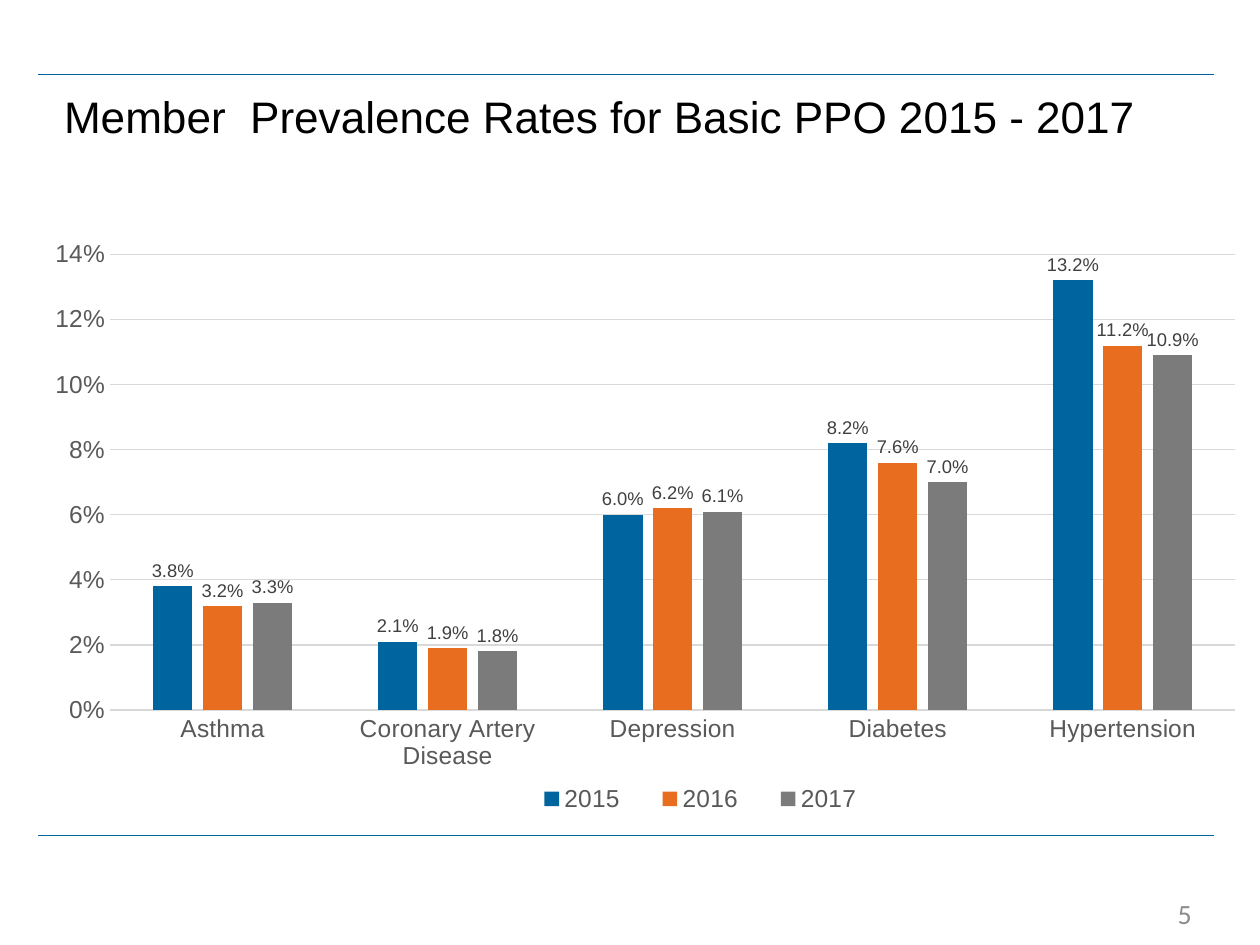
from dataclasses import dataclass

from lxml import etree
from pptx import Presentation
from pptx.chart.data import CategoryChartData
from pptx.dml.color import RGBColor
from pptx.enum.chart import XL_CHART_TYPE, XL_LABEL_POSITION, XL_LEGEND_POSITION, XL_TICK_MARK
from pptx.enum.shapes import MSO_CONNECTOR
from pptx.enum.text import MSO_ANCHOR, PP_ALIGN
from pptx.oxml.ns import qn
from pptx.util import Pt

COLUMNS = XL_CHART_TYPE.COLUMN_CLUSTERED
OUTSIDE = XL_LABEL_POSITION.OUTSIDE_END
BOTTOM = XL_LEGEND_POSITION.BOTTOM
NO_TICK = XL_TICK_MARK.NONE
STRAIGHT = MSO_CONNECTOR.STRAIGHT
TOP = MSO_ANCHOR.TOP
LEFT, RIGHT = PP_ALIGN.LEFT, PP_ALIGN.RIGHT

BLUE, ORANGE, GRAY = "00659E", "E86D1F", "7B7B7B"
GRID, AXIS_TEXT, LABEL_TEXT = "D9D9D9", "595959", "404040"


@dataclass
class Label:
    text: str
    x: float
    y: float
    w: float
    h: float
    size: float
    font: str
    color: str
    align: PP_ALIGN
    spacing: float


@dataclass
class YearRates:
    year: str
    rates: tuple[float, ...]
    color: str


CONDITIONS = ("Asthma", "Coronary Artery Disease", "Depression", "Diabetes", "Hypertension")
YEARS = (
    YearRates("2015", (0.038, 0.021, 0.060, 0.082, 0.132), BLUE),
    YearRates("2016", (0.032, 0.019, 0.062, 0.076, 0.112), ORANGE),
    YearRates("2017", (0.033, 0.018, 0.061, 0.070, 0.109), GRAY),
)
LABELS = (
    Label("Member  Prevalence Rates for Basic PPO 2015 - 2017",
          29.5, 50.8, 666, 62, 25.2, "Arial", "000000", LEFT, 0.9),
    Label("5", 542, 509, 146, 19.5, 15.9, "Calibri", "8C8C8C", RIGHT, 1.0),
)
RULE_LEFT, RULE_RIGHT = 21.6, 694
RULE_TOPS = (42.5, 477.4)


def rgb(color: str) -> RGBColor:
    return RGBColor.from_string(color)


def set_font(font, size: float, color: str, name: str = "Arial") -> None:
    font.size = Pt(size)
    font.name = name
    font.color.rgb = rgb(color)


def set_line(line, color: str, width: float) -> None:
    line.color.rgb = rgb(color)
    line.width = Pt(width)


def add_rule(s, y: float) -> None:
    rule = s.shapes.add_connector(STRAIGHT, Pt(RULE_LEFT), Pt(y), Pt(RULE_RIGHT), Pt(y))
    set_line(rule.line, BLUE, 0.5)
    etree.SubElement(rule._element.spPr, qn("a:effectLst"))


def add_label(s, label: Label) -> None:
    sp = s.shapes.add_textbox(Pt(label.x), Pt(label.y), Pt(label.w), Pt(label.h))
    tf = sp.text_frame
    tf.word_wrap = True
    tf.vertical_anchor = TOP
    p = tf.paragraphs[0]
    p.alignment = label.align
    p.line_spacing = label.spacing
    r = p.add_run()
    r.text = label.text
    set_font(r.font, label.size, label.color, label.font)


def set_layout(parent, index: int, **values: str | float) -> None:
    for old in parent.findall(qn("c:layout")):
        parent.remove(old)
    layout = etree.Element(qn("c:layout"))
    manual = etree.SubElement(layout, qn("c:manualLayout"))
    for tag, value in values.items():
        etree.SubElement(manual, qn(f"c:{tag}")).set("val", str(value))
    parent.insert(index, layout)


def add_rates_chart(s) -> None:
    data = CategoryChartData(number_format="0.0%")
    data.categories = CONDITIONS
    for entry in YEARS:
        data.add_series(entry.year, entry.rates)
    chart = s.shapes.add_chart(COLUMNS, Pt(17.3), Pt(131), Pt(702.7), Pt(342.7), data).chart
    chart.has_title = False
    set_font(chart.font, 10, "000000")

    plot = chart.plots[0]
    plot.gap_width = 219
    plot.overlap = -27
    plot.vary_by_categories = False
    for series, entry in zip(plot.series, YEARS):
        series.format.fill.solid()
        series.format.fill.fore_color.rgb = rgb(entry.color)
        series.invert_if_negative = False
    plot.has_data_labels = True
    labels = plot.data_labels
    labels.show_value = True
    labels.position = OUTSIDE
    labels.number_format = "0.0%"
    labels.number_format_is_linked = False
    set_font(labels.font, 10.5, LABEL_TEXT)

    for axis in (chart.category_axis, chart.value_axis):
        axis.major_tick_mark = axis.minor_tick_mark = NO_TICK
        set_font(axis.tick_labels.font, 14, AXIS_TEXT)
    set_line(chart.category_axis.format.line, GRID, 0.75)
    rates = chart.value_axis
    rates.minimum_scale, rates.maximum_scale, rates.major_unit = 0, 0.14, 0.02
    rates.tick_labels.number_format = "0%"
    rates.tick_labels.number_format_is_linked = False
    rates.format.line.fill.background()
    set_line(rates.major_gridlines.format.line, GRID, 0.75)

    chart.has_legend = True
    legend = chart.legend
    legend.position = BOTTOM
    legend.include_in_layout = False
    set_font(legend.font, 14, AXIS_TEXT)
    set_layout(legend._element, 1, xMode="edge", yMode="edge", x=0.39, y=0.92, w=0.31, h=0.06)
    plot_area = chart._chartSpace.chart.plotArea
    set_layout(plot_area, 0, layoutTarget="inner", xMode="edge", yMode="edge",
               x=0.065, y=0.042, w=0.915, h=0.76)


def main() -> None:
    prs = Presentation()
    prs.slide_width, prs.slide_height = Pt(720), Pt(540)
    s = prs.slides.add_slide(prs.slide_layouts[6])
    for y in RULE_TOPS:
        add_rule(s, y)
    add_rates_chart(s)
    for label in LABELS:
        add_label(s, label)
    prs.save("out.pptx")


if __name__ == "__main__":
    main()
